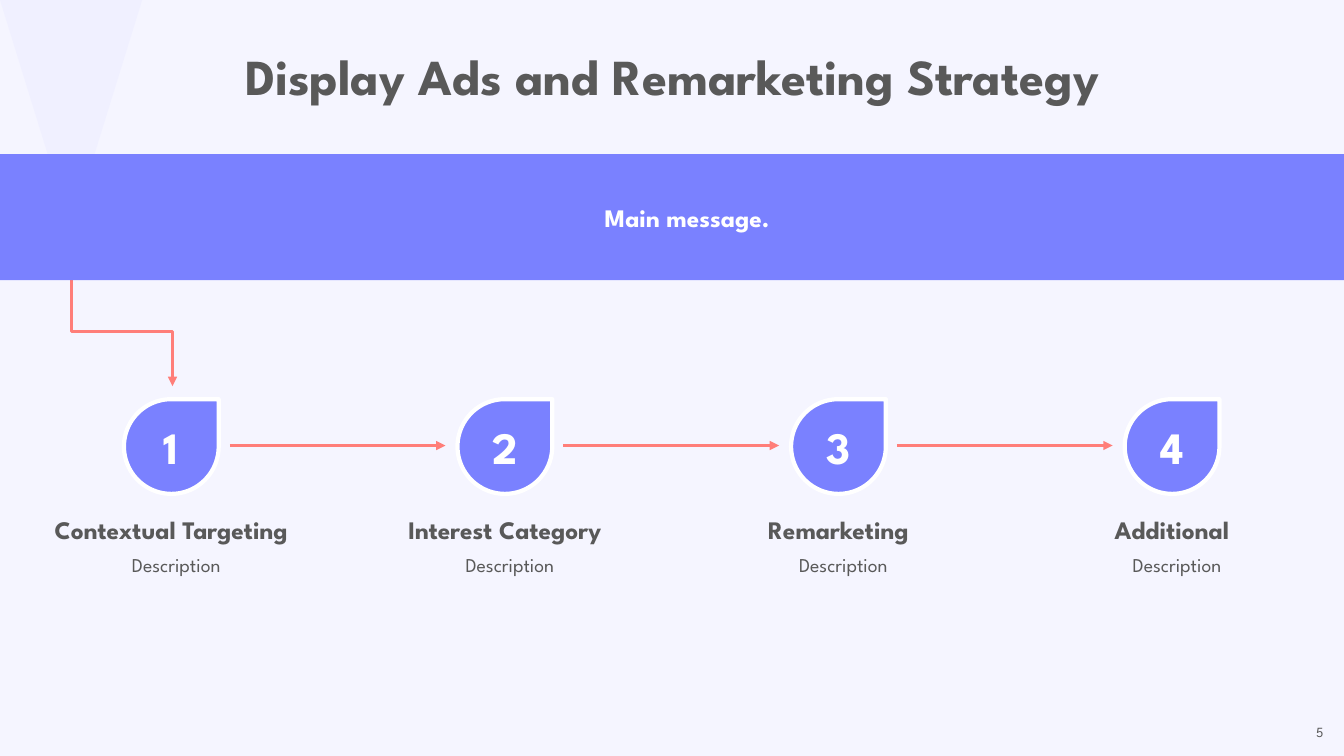
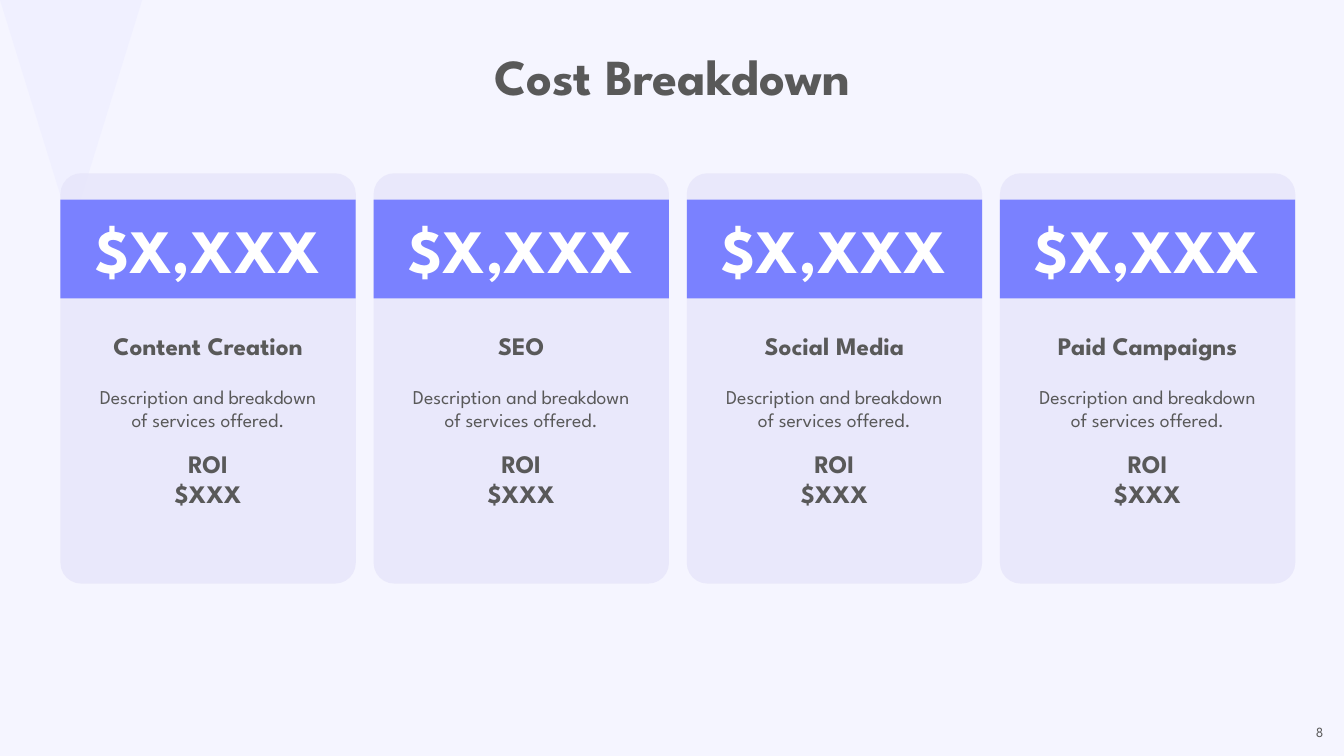
from lxml.etree import SubElement
from pptx import Presentation
from pptx.dml.color import RGBColor
from pptx.enum.shapes import MSO_CONNECTOR as Connector, MSO_SHAPE as Preset
from pptx.enum.text import MSO_ANCHOR as Anchor, PP_ALIGN as Align
from pptx.oxml.ns import qn
from pptx.util import Inches, Pt

WIDTH, HEIGHT = Inches(13.33), Inches(7.5)
FONT = "League Spartan"
COLORS = {
    "background": "F5F5FF",
    "triangle": "ECECFF",
    "card": "E6E5FA",
    "accent": "7A81FF",
    "arrow": "FF7E79",
    "text": "595959",
    "white": "FFFFFF",
}
STEP_PITCH, CARD_PITCH = 24.82, 23.3
STEPS = ["Contextual Targeting", "Interest Category", "Remarketing", "Additional"]
SERVICES = ["Content Creation", "SEO", "Social Media", "Paid Campaigns"]


def color(name):
    """Return the named palette colour."""
    return RGBColor.from_string(COLORS[name])


def across(percent):
    """Turn a percentage of the slide's width into a length."""
    return int(WIDTH * percent / 100)


def down(percent):
    """Turn a percentage of the slide's height into a length."""
    return int(HEIGHT * percent / 100)


def place(box):
    """Turn left, top, width and height percentages into lengths."""
    left, top, width, height = box
    return across(left), down(top), across(width), down(height)


def line_of(text, size, bold=False, fill="text", before=0, indent=0):
    """Describe one paragraph of text."""
    return {"text": text, "size": size, "bold": bold, "fill": fill,
            "before": before, "indent": indent}


def write(shape, lines, align=Align.CENTER, anchor=Anchor.TOP, insets=(0.1, 0.05, 0.1, 0.05)):
    """Fill a shape with styled paragraphs."""
    frame = shape.text_frame
    frame.word_wrap = True
    frame.vertical_anchor = anchor
    (frame.margin_left, frame.margin_top,
     frame.margin_right, frame.margin_bottom) = map(Inches, insets)
    for index, line in enumerate(lines):
        paragraph = frame.add_paragraph() if index else frame.paragraphs[0]
        paragraph.alignment = align
        paragraph.space_before = Pt(line["before"])
        if line["indent"]:
            paragraph._p.get_or_add_pPr().set("marL", str(Inches(line["indent"])))
        run = paragraph.add_run()
        run.text = line["text"]
        run.font.name = FONT
        run.font.size = Pt(line["size"])
        run.font.bold = line["bold"]
        run.font.color.rgb = color(line["fill"])


def add_text(slide, box, lines, **style):
    """Add a wrapped text box."""
    write(slide.shapes.add_textbox(*place(box)), lines, **style)


def add_preset(slide, preset, box, fill, opacity=100, outline=0):
    """Add a flat preset shape, with a white outline if its width is given."""
    shape = slide.shapes.add_shape(preset, *place(box))
    shape.shadow.inherit = False
    shape.fill.solid()
    shape.fill.fore_color.rgb = color(fill)
    if opacity < 100:
        swatch = shape._element.spPr.find(qn("a:solidFill"))[0]
        SubElement(swatch, qn("a:alpha")).set("val", str(opacity * 1000))
    if outline:
        shape.line.color.rgb = color("white")
        shape.line.width = Pt(outline)
    else:
        shape.line.fill.background()
    return shape


def add_arrow(slide, kind, left, top, width, height=0):
    """Add a connector that ends in an arrowhead."""
    arrow = slide.shapes.add_connector(
        kind, across(left), down(top), across(left + width), down(top + height))
    arrow.line.color.rgb = color("arrow")
    arrow.line.width = Pt(2.25)
    SubElement(arrow.line._get_or_add_ln(), qn("a:tailEnd")).set("type", "triangle")
    SubElement(arrow._element.spPr, qn("a:effectLst"))
    return arrow


def add_base(presentation, title, number):
    """Add a slide with the shared background, triangle, title and number."""
    slide = presentation.slides.add_slide(presentation.slide_layouts[6])
    slide.background.fill.solid()
    slide.background.fill.fore_color.rgb = color("background")
    add_preset(slide, Preset.ISOSCELES_TRIANGLE, (0, 0, 10.58, 30.4),
               "triangle", opacity=50).rotation = 180
    add_text(slide, (93.22, 94.67, 6.75, 4.4), [line_of(number, 10)],
             align=Align.RIGHT, insets=(0.1, 0.08, 0.2, 0.08))
    add_text(slide, (5.32, 5.33, 89.4, 9.47), [line_of(title, 36, True)])
    return slide


def add_step(slide, index, name):
    """Add a numbered drop with its label."""
    offset = index * STEP_PITCH
    drop = add_preset(slide, Preset.TEAR, (9.22 + offset, 52.8, 7.05, 12.53),
                      "accent", outline=3)
    write(drop, [line_of(str(index + 1), 32, True, "white")], anchor=Anchor.MIDDLE)
    add_text(slide, (3.22 + offset, 67.33, 19.05, 10.8), [
        line_of(name, 18, True, before=6),
        line_of("Description", 14, before=6, indent=0.1),
    ])


def add_card(slide, index, service):
    """Add a service card with its price band."""
    left, width = 4.5 + index * CARD_PITCH, 21.97
    card = add_preset(slide, Preset.ROUNDED_RECTANGLE, (left, 22.93, width, 54.27),
                      "card", opacity=80)
    card.adjustments[0] = 0.07
    write(card, [
        line_of(service, 18, True),
        line_of("Description and breakdown of services offered.", 14, before=17),
        line_of("ROI", 18, True, before=12),
        line_of("$XXX", 18, True),
    ], insets=(0.3, 1.5, 0.3, 0.3))
    price = add_preset(slide, Preset.RECTANGLE, (left, 26.4, width, 13.07), "accent")
    write(price, [line_of("$X,XXX", 44, True, "white")], anchor=Anchor.MIDDLE)


def build_strategy(presentation):
    """Build the slide with the message band and the four steps."""
    slide = add_base(presentation, "Display Ads and Remarketing Strategy", "5")
    elbow = add_arrow(slide, Connector.ELBOW, 5.03, 37.2, 8.1, 13.33)
    frame = elbow._element.spPr.find(qn("a:xfrm"))
    frame.set("rot", str(270 * 60000))
    frame.set("flipH", "1")
    band = add_preset(slide, Preset.RECTANGLE, (0, 20.4, 100, 16.67), "accent")
    write(band, [line_of("Main message.", 18, True, "white")],
          anchor=Anchor.MIDDLE, insets=(0.4, 0.3, 0.1, 0.3))
    for index, name in enumerate(STEPS):
        add_step(slide, index, name)
    for index in range(len(STEPS) - 1):
        add_arrow(slide, Connector.STRAIGHT, 17.1 + index * STEP_PITCH, 58.93, 16.05)


def build_costs(presentation):
    """Build the slide with the four service cards."""
    slide = add_base(presentation, "Cost Breakdown", "8")
    for index, service in enumerate(SERVICES):
        add_card(slide, index, service)


def main():
    """Build and save the presentation."""
    presentation = Presentation()
    presentation.slide_width, presentation.slide_height = WIDTH, HEIGHT
    build_strategy(presentation)
    build_costs(presentation)
    presentation.save("out.pptx")


if __name__ == "__main__":
    main()
